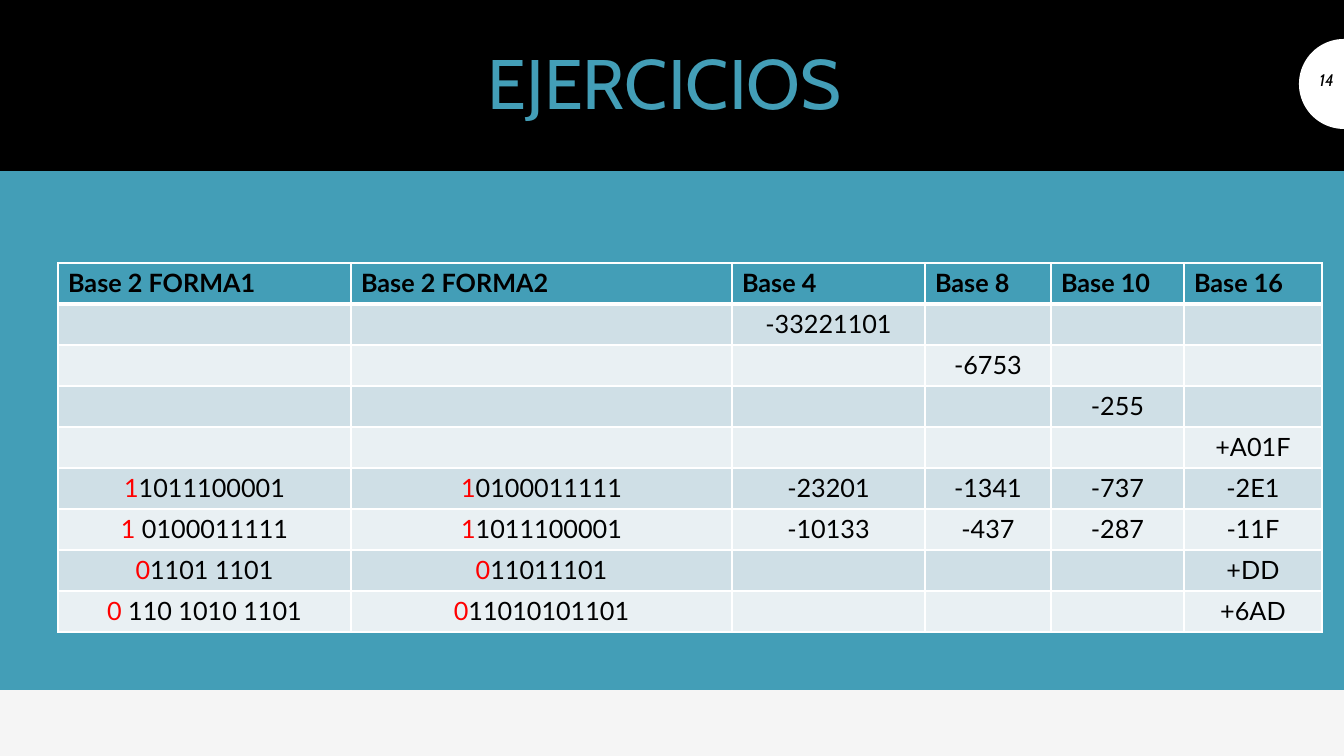
from math import cos, pi, sin

from lxml.etree import SubElement
from pptx import Presentation
from pptx.dml.color import RGBColor
from pptx.enum.shapes import MSO_SHAPE
from pptx.enum.text import MSO_ANCHOR, MSO_AUTO_SIZE, PP_ALIGN
from pptx.oxml.ns import qn
from pptx.util import Pt

PX = 914400 / 100.8
THEME = {
    "paper": "F5F5F5", "accent": "439EB7", "black": "000000", "white": "FFFFFF",
    "sign": "FF0000", "rows": ("E9F0F3", "CFDFE6"),
    "heading": "Cabin", "body": "Lato",
    "title_size": 50, "cell_size": 18, "number_size": 12,
}


def px(*lengths):
    """Turn pixel lengths into a list of EMU values."""
    return [round(length * PX) for length in lengths]


def add_run(paragraph, text, color, **font_format):
    run = paragraph.add_run()
    run.text = text
    run.font.color.rgb = RGBColor.from_string(color)
    for attribute, value in font_format.items():
        setattr(run.font, attribute, value)


prs = Presentation()
prs.slide_width, prs.slide_height = px(1344, 756)
slide = prs.slides.add_slide(prs.slide_layouts[5])
slide.background.fill.solid()
slide.background.fill.fore_color.rgb = RGBColor.from_string(THEME["paper"])

# Bands and the half disc behind the slide number
body_band = slide.shapes.add_shape(MSO_SHAPE.RECTANGLE, *px(0, 170, 1344, 520))
title_band = slide.shapes.add_shape(MSO_SHAPE.RECTANGLE, *px(0, 0, 1344, 171))
radius, steps = 45, 40
arc = [px(1344 - radius * sin(pi * i / steps), 84 - radius * cos(pi * i / steps))
       for i in range(steps + 1)]
outline = slide.shapes.build_freeform(*arc[0])
outline.add_line_segments(arc[1:], close=True)
number_disc = outline.convert_to_shape()
for backdrop, color in ((body_band, "accent"), (title_band, "black"), (number_disc, "white")):
    backdrop.shadow.inherit = False
    backdrop.fill.solid()
    backdrop.fill.fore_color.rgb = RGBColor.from_string(THEME[color])
    backdrop.line.fill.background()

# Title, brought in front of the bands, and slide number
title = slide.shapes.title
slide.shapes._spTree.append(title._element)
number = slide.shapes.add_textbox(*px(1299, 65, 45, 40))
title.left, title.top, title.width, title.height = px(84, 31, 1177, 111)
frame_format = {"word_wrap": True, "auto_size": MSO_AUTO_SIZE.NONE}
for label, anchor in ((title, MSO_ANCHOR.MIDDLE), (number, MSO_ANCHOR.TOP)):
    for attribute, value in frame_format.items():
        setattr(label.text_frame, attribute, value)
    label.text_frame.vertical_anchor = anchor

heading = title.text_frame.paragraphs[0]
heading.alignment = PP_ALIGN.CENTER
heading.line_spacing = 0.9
add_run(heading, "EJERCICIOS ", THEME["accent"],
        name=THEME["heading"], size=Pt(THEME["title_size"]))
page = number.text_frame.paragraphs[0]
page.alignment = PP_ALIGN.RIGHT
add_run(page, "14", THEME["black"],
        name=THEME["heading"], size=Pt(THEME["number_size"]), italic=True)

# Table of conversions; the first digit of a base 2 number is its sign
conversions = [
    ("Base 2 FORMA1", "Base 2 FORMA2", "Base 4", "Base 8", "Base 10", "Base 16"),
    ("", "", "-33221101", "", "", ""),
    ("", "", "", "-6753", "", ""),
    ("", "", "", "", "-255", ""),
    ("", "", "", "", "", "+A01F"),
    ("11011100001", "10100011111", "-23201", "-1341", "-737", "-2E1"),
    ("1 0100011111", "11011100001", "-10133", "-437", "-287", "-11F"),
    ("01101 1101", "011011101", "", "", "", "+DD"),
    ("0 110 1010 1101", "011010101101", "", "", "", "+6AD"),
]
column_widths = (293, 381, 193, 126, 133, 138)
table = slide.shapes.add_table(len(conversions), len(column_widths),
                               *px(58, 263, sum(column_widths), 41 * len(conversions))).table
for column, width in zip(table.columns, px(*column_widths)):
    column.width = width

for r, values in enumerate(conversions):
    table.rows[r].height = px(41)[0]
    is_header = r == 0
    for c, value in enumerate(values):
        cell = table.cell(r, c)
        border_widths = {"a:lnL": 1, "a:lnR": 1, "a:lnT": 3 if r == 1 else 1,
                         "a:lnB": 3 if is_header else 1}
        for side, width in border_widths.items():
            border = SubElement(cell._tc.get_or_add_tcPr(), qn(side), w=str(Pt(width)))
            SubElement(SubElement(border, qn("a:solidFill")), qn("a:srgbClr"), val=THEME["white"])
        cell.fill.solid()
        cell.fill.fore_color.rgb = RGBColor.from_string(
            THEME["accent"] if is_header else THEME["rows"][r % 2])

        entry = cell.text_frame.paragraphs[0]
        entry.alignment = PP_ALIGN.LEFT if is_header else PP_ALIGN.CENTER
        sign_length = 1 if c < 2 and not is_header else 0
        for text, color in ((value[:sign_length], "sign"), (value[sign_length:], "black")):
            if text:
                add_run(entry, text, THEME[color], name=THEME["body"],
                        size=Pt(THEME["cell_size"]), bold=is_header)

prs.save("out.pptx")
